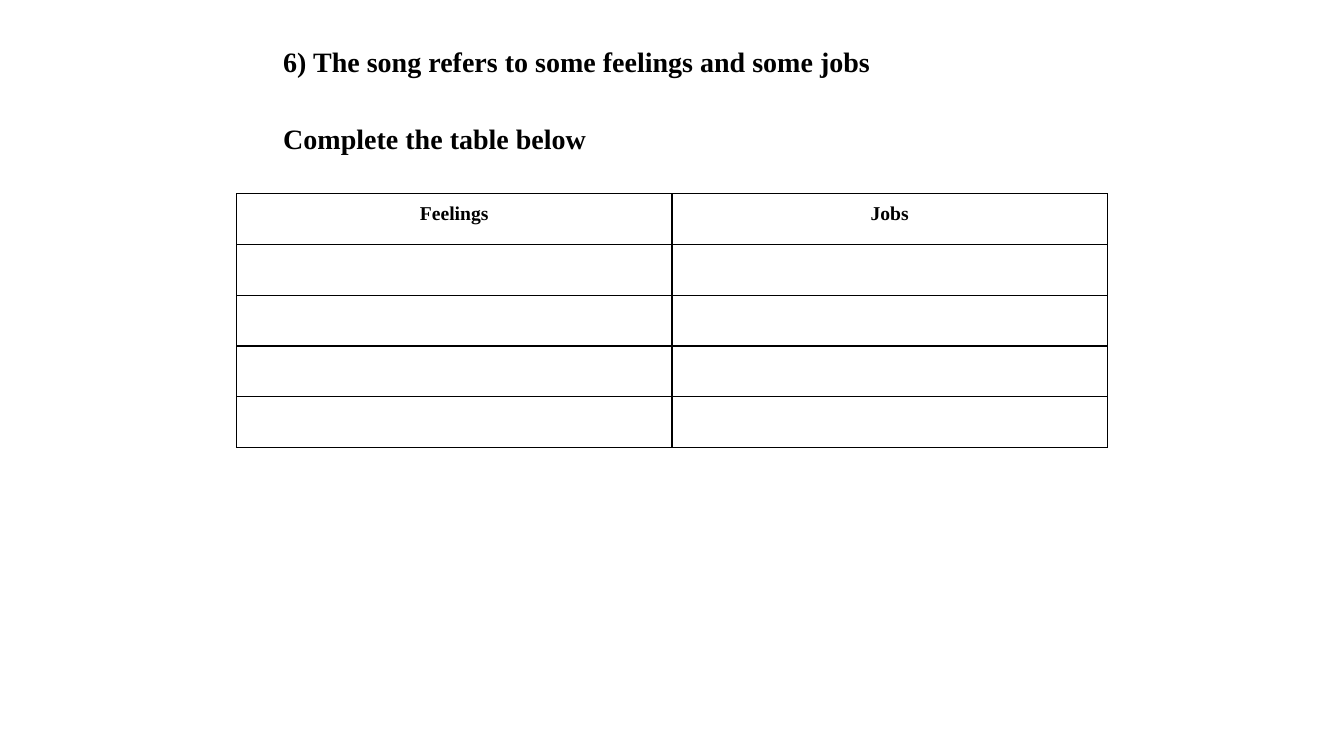
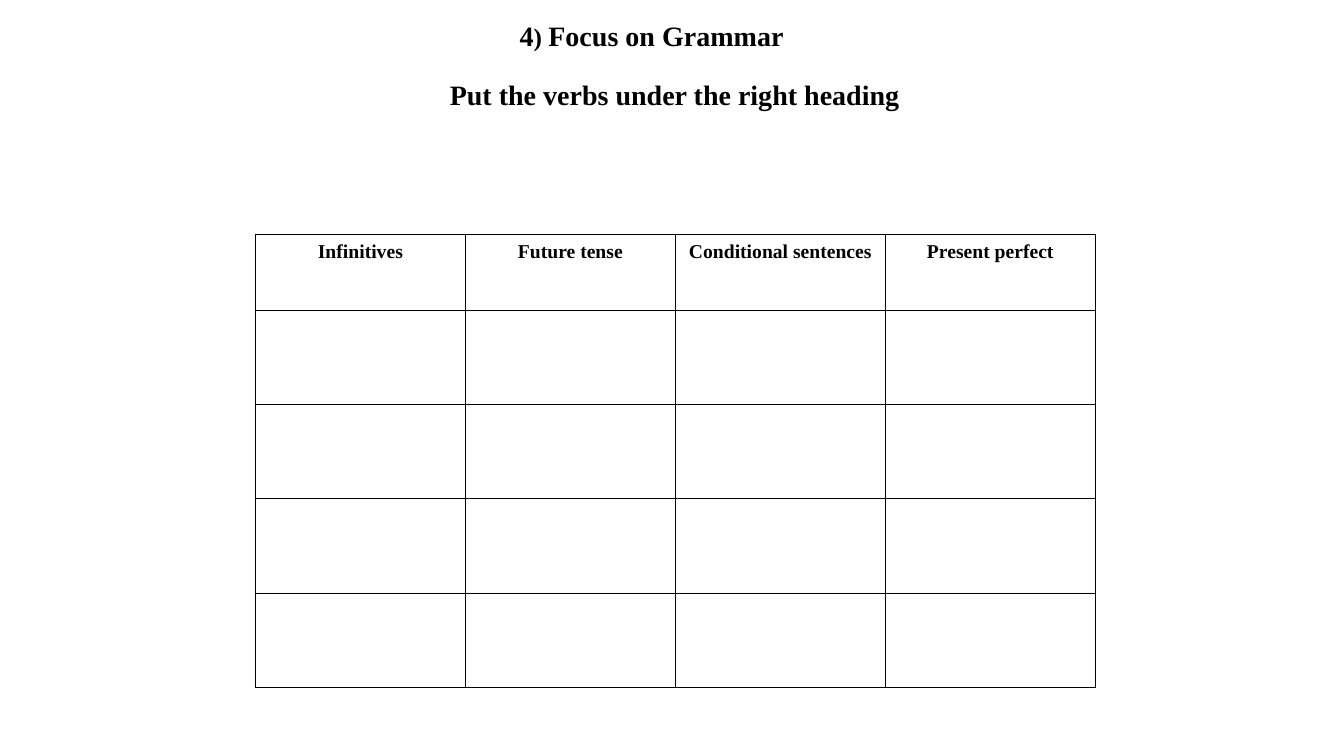
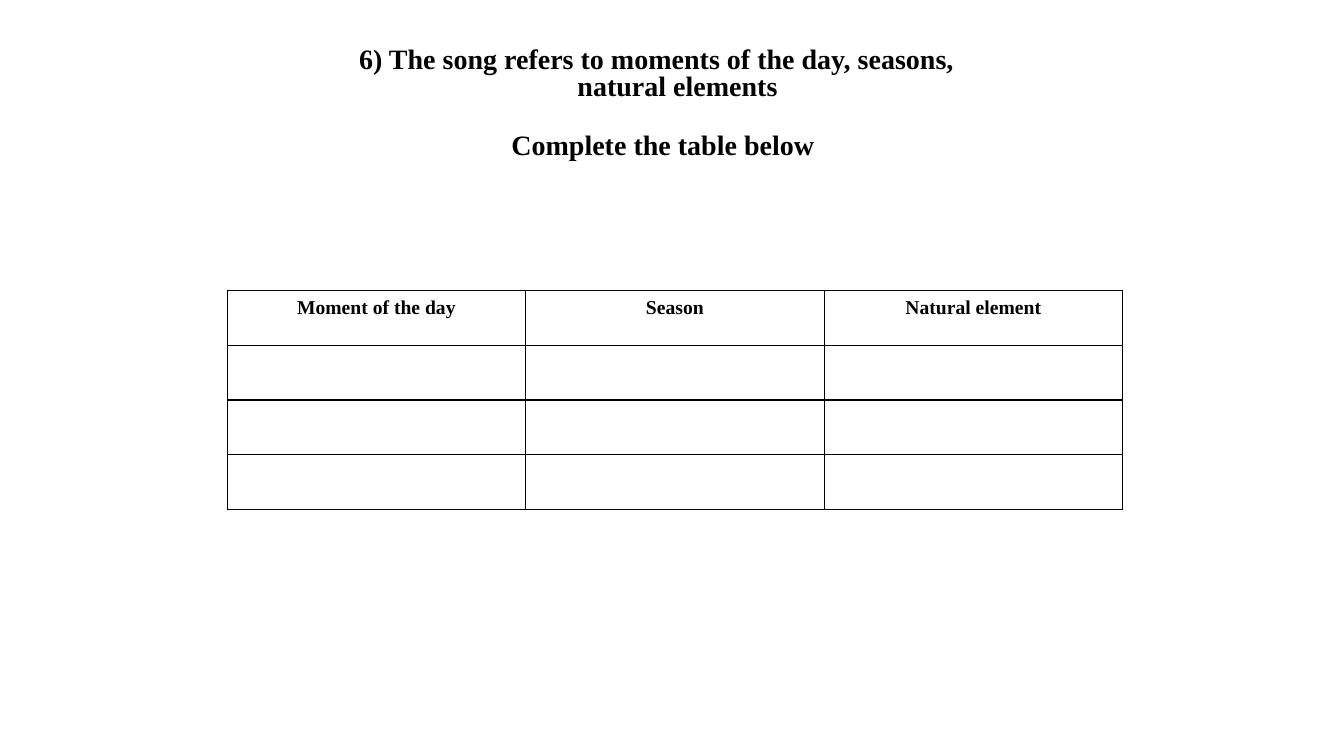
from lxml.etree import SubElement
from pptx import Presentation
from pptx.dml.color import RGBColor
from pptx.enum.text import MSO_ANCHOR, MSO_AUTO_SIZE, PP_ALIGN
from pptx.oxml.ns import qn
from pptx.util import Pt

COLORS = {"ink": "000000"}
FONT = "Times New Roman"
TITLE_SIZE, HEADING_SIZE = 20, 14
TITLE_LINE = 19.5
TITLE_ONLY = 5


def style_paragraph(paragraph, size, align):
    paragraph.alignment = align
    paragraph.font.name = FONT
    paragraph.font.size = Pt(size)
    paragraph.font.bold = True
    paragraph.font.color.rgb = RGBColor.from_string(COLORS["ink"])


def add_borders(cell, width):
    """Draw all four sides of a table cell."""
    properties = cell._tc.get_or_add_tcPr()
    for side in ("lnL", "lnR", "lnT", "lnB"):
        line = SubElement(properties, qn(f"a:{side}"), w=str(Pt(width)))
        fill = SubElement(line, qn("a:solidFill"))
        SubElement(fill, qn("a:srgbClr"), val=COLORS["ink"])


# Title lines: left margin, first-line indent, spans of text and size.
# Boxes: left, top, width, height. Cell margins: sides, top and bottom.
exercises = [
    {
        "title_box": (202.3, 36.2, 555, 80),
        "align": PP_ALIGN.LEFT,
        "gap": 35.5,
        "lines": [
            (0, 0, [("6) The song refers to some feelings and some jobs", 20)]),
            (0, 0, [("Complete the table below", 20)]),
        ],
        "headings": ["Feelings", "Jobs"],
        "table_box": (169, 138.5, 622, 181.25),
        "rows": 5,
        "header_height": 36.25,
        "margins": (6.5, 6.5),
        "border": 1,
    },
    {
        "title_box": (231, 17.7, 466, 65),
        "align": PP_ALIGN.CENTER,
        "gap": 22.6,
        "lines": [
            (36, -33, [("4", 20), (") ", 18), ("Focus on Grammar", 20)]),
            (36, 0, [("Put the verbs under the right heading", 20)]),
        ],
        "headings": ["Infinitives", "Future tense", "Conditional sentences", "Present perfect"],
        "table_box": (182.5, 167.5, 600, 323.5),
        "rows": 5,
        "header_height": 54.3,
        "margins": (7.2, 5),
        "border": 0.75,
    },
    {
        "title_box": (236, 34.1, 466, 85),
        "align": PP_ALIGN.CENTER,
        "gap": 22.6,
        "lines": [
            (30, -30, [("6) The song refers to moments of the day, seasons, natural elements", 20)]),
            (30, -21, [("Complete the table below", 20)]),
        ],
        "headings": ["Moment of the day", "Season", "Natural element"],
        "table_box": (162.3, 207.5, 639.6, 156.4),
        "rows": 4,
        "header_height": 39.1,
        "margins": (9.4, 5),
        "border": 1,
    },
]

deck = Presentation()
deck.slide_width, deck.slide_height = Pt(960), Pt(540)

for exercise in exercises:
    page = deck.slides.add_slide(deck.slide_layouts[TITLE_ONLY])

    title = page.shapes.title
    title.left, title.top, title.width, title.height = map(Pt, exercise["title_box"])
    frame = title.text_frame
    frame.word_wrap = True
    frame.auto_size = MSO_AUTO_SIZE.NONE
    frame.vertical_anchor = MSO_ANCHOR.TOP
    frame.margin_left = frame.margin_right = frame.margin_top = frame.margin_bottom = 0
    for index, (margin, indent, spans) in enumerate(exercise["lines"]):
        para = frame.add_paragraph() if index else frame.paragraphs[0]
        properties = para._p.get_or_add_pPr()
        properties.set("marL", str(Pt(margin)))
        properties.set("indent", str(Pt(indent)))
        para.line_spacing = Pt(TITLE_LINE)
        if index:
            para.space_before = Pt(exercise["gap"])
        style_paragraph(para, TITLE_SIZE, exercise["align"])
        for text, size in spans:
            span = para.add_run()
            span.text = text
            if size != TITLE_SIZE:
                span.font.size = Pt(size)

    headings, row_count = exercise["headings"], exercise["rows"]
    left, top, width, height = exercise["table_box"]
    table = page.shapes.add_table(
        row_count, len(headings), Pt(left), Pt(top), Pt(width), Pt(height)
    ).table
    table.first_row = table.horz_banding = False
    header_height = exercise["header_height"]
    for row in table.rows:
        row.height = Pt((height - header_height) / (row_count - 1))
    table.rows[0].height = Pt(header_height)

    side_margin, end_margin = exercise["margins"]
    for cell in table.iter_cells():
        add_borders(cell, exercise["border"])
        cell.fill.background()
        cell.margin_left = cell.margin_right = Pt(side_margin)
        cell.margin_top = cell.margin_bottom = Pt(end_margin)
    for column, heading in enumerate(headings):
        cell = table.cell(0, column)
        cell.text = heading
        style_paragraph(cell.text_frame.paragraphs[0], HEADING_SIZE, PP_ALIGN.CENTER)

deck.save("out.pptx")
